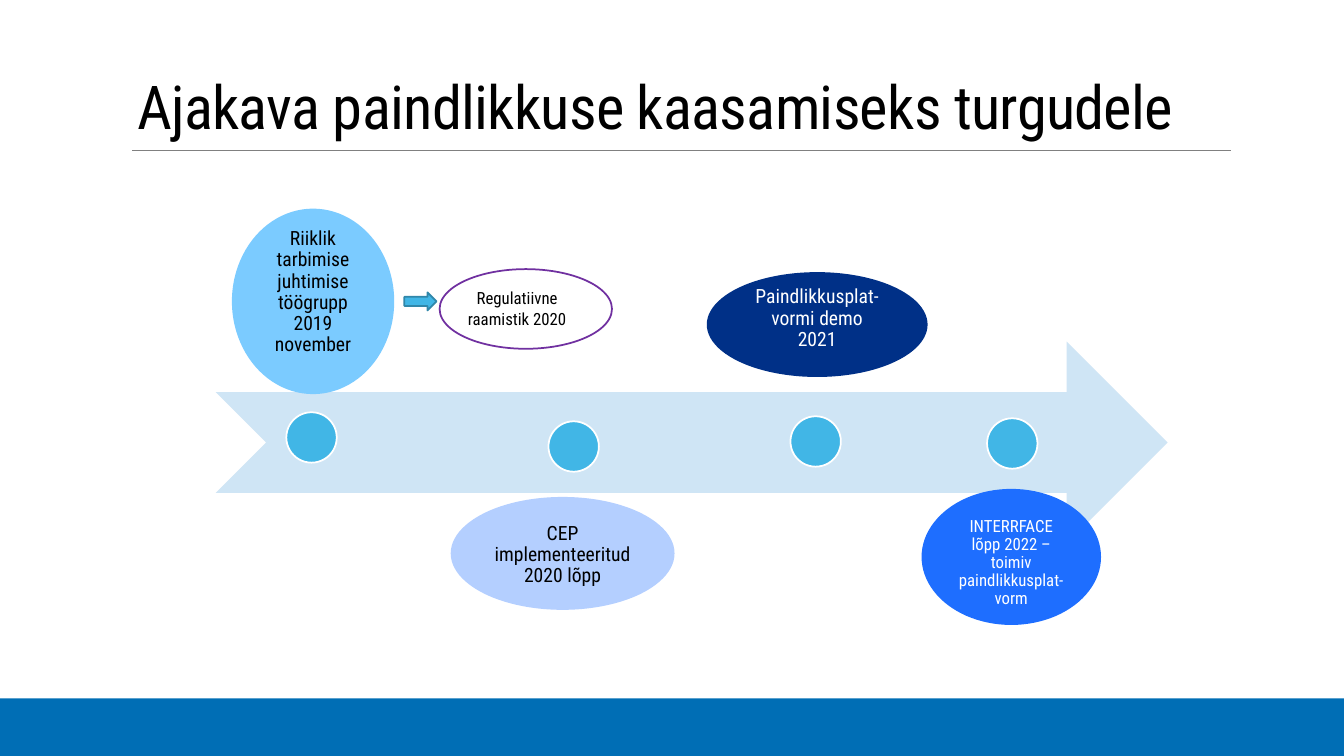
"""Builds a timeline slide about bringing flexibility to the markets."""
from pptx import Presentation
from pptx.dml.color import RGBColor
from pptx.enum.shapes import MSO_CONNECTOR, MSO_SHAPE
from pptx.enum.text import MSO_ANCHOR, MSO_AUTO_SIZE, PP_ALIGN
from pptx.oxml.ns import qn
from pptx.util import Pt
from lxml.etree import SubElement

EMU_PER_PX = 9144
FONT = "Roboto Condensed"
DOT_SIZE = 50
COLOURS = {
    "black": "000000",
    "white": "FFFFFF",
    "footer": "006EB5",
    "rule": "808080",
    "timeline": "CFE5F5",
    "dot": "41B6E6",
    "arrow_edge": "3087AA",
    "sky": "7BCBFF",
    "lavender": "B4CFFF",
    "navy": "003087",
    "blue": "1E6EFF",
    "purple": "7030A0",
}
MILESTONES = [
    ("Riiklik tarbimise juhtimise töögrupp 2019 november",
     (230, 207, 161, 184), (284, 409), "sky", "black", 14, 11, MSO_ANCHOR.BOTTOM),
    ("CEP implementeeritud 2020 lõpp",
     (447, 493, 222, 112), (544, 418), "lavender", "black", 14, 10, MSO_ANCHOR.TOP),
    ("Paindlikkusplat-vormi demo 2021",
     (701, 270, 219, 104), (784, 413), "navy", "white", 14, 11, MSO_ANCHOR.BOTTOM),
    ("INTERRFACE lõpp 2022 – toimiv paindlikkusplat-vorm",
     (914, 485, 178, 135), (979, 415), "blue", "white", 12, 9, MSO_ANCHOR.TOP),
]


def px(*lengths):
    return [length * EMU_PER_PX for length in lengths]


def colour(name):
    return RGBColor.from_string(COLOURS[name])


def add_figure(page, kind, area, fill, edge=None):
    figure = page.shapes.add_shape(kind, *px(*area))
    figure.shadow.inherit = False
    figure.fill.solid()
    figure.fill.fore_color.rgb = colour(fill)
    if edge:
        figure.line.color.rgb = colour(edge)
        figure.line.width = Pt(1.25)
    else:
        figure.line.fill.background()
    return figure


def write(box, text, size, ink="black", align=PP_ALIGN.CENTER, anchor=MSO_ANCHOR.TOP,
          spacing=1.0, insets=(10, 5), tracking=None):
    frame = box.text_frame
    frame.word_wrap = True
    frame.auto_size = MSO_AUTO_SIZE.NONE
    frame.vertical_anchor = anchor
    frame.margin_left, frame.margin_top = px(*insets)
    frame.margin_right, frame.margin_bottom = px(*insets)
    para = frame.paragraphs[0]
    para.alignment = align
    para.line_spacing = spacing
    span = para.add_run()
    span.text = text
    span.font.name = FONT
    span.font.size = Pt(size)
    span.font.color.rgb = colour(ink)
    if tracking:
        span.font._element.set("spc", str(tracking))


def add_title(page, text):
    title = page.shapes.title
    title.left, title.top, title.width, title.height = px(126, 28, 1100, 118)
    write(title, text, 43.2, align=PP_ALIGN.LEFT, anchor=MSO_ANCHOR.BOTTOM,
          spacing=0.85, tracking=-50)


def add_rule(page, left, right, top):
    rule = page.shapes.add_connector(MSO_CONNECTOR.STRAIGHT, *px(left, top, right, top))
    rule.line.color.rgb = colour("rule")
    rule.line.width = Pt(0.5)
    SubElement(rule._element.spPr, qn("a:effectLst"))


def add_milestone(page, text, area, dot, fill, ink, size, inset, anchor):
    bubble = add_figure(page, MSO_SHAPE.OVAL, area, fill)
    write(bubble, text, size, ink, anchor=anchor, spacing=0.9, insets=(inset, inset))
    add_figure(page, MSO_SHAPE.OVAL, (*dot, DOT_SIZE, DOT_SIZE), "dot", "white")


def add_regulation(page):
    add_figure(page, MSO_SHAPE.OVAL, (436, 267, 171, 79), "white", "purple")
    label = page.shapes.add_textbox(*px(433, 281, 160, 50))
    write(label, "Regulatiivne raamistik 2020", 12)
    add_figure(page, MSO_SHAPE.RIGHT_ARROW, (401, 290, 32, 18), "dot", "arrow_edge")


def main():
    deck = Presentation()
    deck.slide_width, deck.slide_height = px(1333, 750)
    page = deck.slides.add_slide(deck.slide_layouts[5])
    add_figure(page, MSO_SHAPE.RECTANGLE, (0, 693, 1333, 57), "footer")
    add_rule(page, 131, 1221, 149)
    add_title(page, "Ajakava paindlikkuse kaasamiseks turgudele")
    add_figure(page, MSO_SHAPE.NOTCHED_RIGHT_ARROW, (214, 339, 944, 200), "timeline")
    for milestone in MILESTONES:
        add_milestone(page, *milestone)
    add_regulation(page)
    deck.save("out.pptx")


if __name__ == "__main__":
    main()
